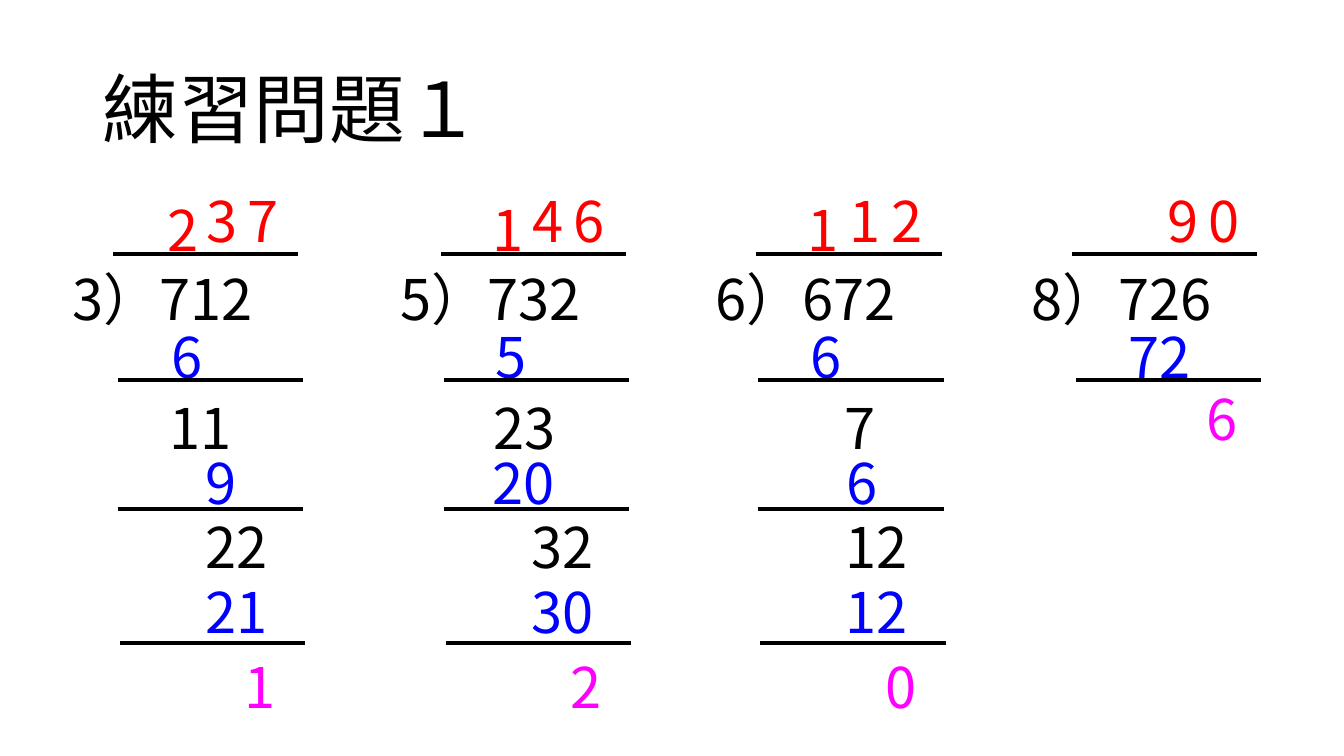
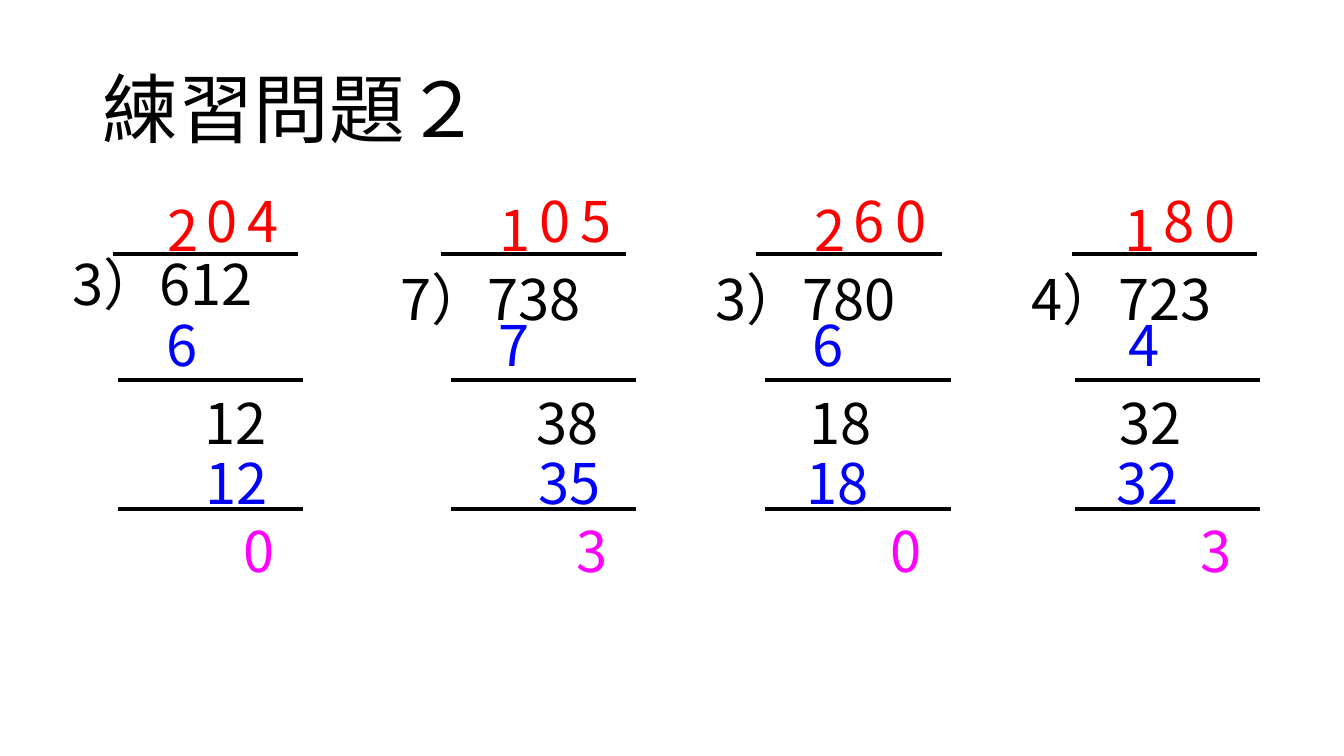
from dataclasses import dataclass
from lxml.etree import SubElement
from pptx import Presentation
from pptx.dml.color import RGBColor
from pptx.enum.shapes import MSO_CONNECTOR
from pptx.enum.text import MSO_ANCHOR, MSO_AUTO_SIZE
from pptx.oxml.ns import qn
from pptx.util import Inches, Pt

FONT = "Noto Sans CJK JP"
COLORS = {"ink": "000000", "quotient": "FF0000", "product": "0000FF", "rest": "FF00FF"}

# Parts of one long division, measured from the top left of its box
TOP = 1.56
LEFTS = (0.62, 3.87, 7, 10.13)
BAR_X, BAR_Y, BAR_W = 0.5, 0.96, 1.84
RULES = ((0, 2.21), (0, 3.49), (0.02, 4.82))
DIGITS = (0.39, 0.78, 1.19)
WIDTHS = {1: 0.58, 2: 1.14}


@dataclass
class Sum:
    head: str
    quotient: str
    work: float  # left edge of the working
    steps: tuple  # (number, offset from work), the remainder last
    slip: float = 0  # shift of the later quotient digits
    high: bool = False  # dividend close under the bar


@dataclass
class Sheet:
    title: str
    rows: tuple  # (top, line spacing) of each step
    rests: dict  # top of the remainder by number of steps
    sums: tuple


SHEETS = (
    Sheet(
        "練習問題１",
        ((1.26, 1.5), (1.96, 1.5), (2.84, 1), (3.48, 1), (4.12, 1)),
        {2: 2.21, 6: 4.86},
        (
            Sum("3）712", "237", 0.55, (("6", 0.43), ("11", 0.41), ("9", 0.77),
                                       ("22", 0.77), ("21", 0.77), ("1", 1.16))),
            Sum("5）732", "146", 0.53, (("5", 0.42), ("23", 0.4), ("20", 0.39),
                                       ("32", 0.77), ("30", 0.77), ("2", 1.16))),
            Sum("6）672", "112", 0.52, (("6", 0.42), ("7", 0.76), ("6", 0.78),
                                       ("12", 0.77), ("12", 0.77), ("0", 1.16)), slip=0.03),
            Sum("8）726", "90", 0.54, (("72", 0.42), ("6", 1.2)), slip=0.03),
        ),
    ),
    Sheet(
        "練習問題２",
        ((1.47, 1), (2.25, 1), (2.84, 1)),
        {4: 3.52},
        (
            Sum("3）612", "204", 0.55, (("6", 0.38), ("12", 0.76), ("12", 0.77), ("0", 1.15)),
                high=True),
            Sum("7）738", "105", 0.6, (("7", 0.38), ("38", 0.75), ("35", 0.77), ("3", 1.15))),
            Sum("3）780", "260", 0.59, (("6", 0.37), ("18", 0.34), ("18", 0.31), ("0", 1.14))),
            Sum("4）723", "180", 0.53, (("4", 0.43), ("32", 0.35), ("32", 0.32), ("3", 1.15))),
        ),
    ),
)


def add_text(slide, text, left, top, width, height, size=40, color="ink", lead=1):
    box = slide.shapes.add_textbox(Inches(left), Inches(top), Inches(width), Inches(height))
    frame = box.text_frame
    frame.text = text
    frame.word_wrap = True
    line = frame.paragraphs[0]
    line.line_spacing = lead
    run = line.runs[0]
    run.font.size = Pt(size)
    run.font.color.rgb = RGBColor.from_string(COLORS[color])
    run.font.name = FONT
    SubElement(run.font._element, qn("a:ea")).set("typeface", FONT)
    return frame


def add_title(slide, text):
    frame = add_text(slide, text, 0.92, 0.4, 11.5, 1.45, size=54, lead=0.9)
    frame.vertical_anchor = MSO_ANCHOR.MIDDLE


def add_number(slide, text, left, top, color="ink", lead=1):
    width = WIDTHS.get(len(text), 2.34)
    height = 1.02 if lead > 1 else 0.77
    frame = add_text(slide, text, left, top, width, height, color=color, lead=lead)
    frame.auto_size = MSO_AUTO_SIZE.SHAPE_TO_FIT_TEXT


def add_rule(slide, left, top):
    rule = slide.shapes.add_connector(
        MSO_CONNECTOR.STRAIGHT, Inches(left), Inches(top), Inches(left + BAR_W), Inches(top))
    rule.line.width = Pt(3)
    rule.line.color.rgb = RGBColor.from_string(COLORS["ink"])
    SubElement(rule._element.spPr, qn("a:effectLst"))


def add_sum(slide, item, sheet, left, top):
    work = left + item.work

    # Dividend under its bar
    if item.high:
        add_number(slide, item.head, left, top + 0.87)
    else:
        add_number(slide, item.head, left, top + 0.68, lead=1.5)
    add_rule(slide, left + BAR_X, top + BAR_Y)

    # Quotient, right-aligned on the digit columns
    first = len(DIGITS) - len(item.quotient)
    for col, digit in enumerate(item.quotient, first):
        if col == 0:
            add_number(slide, digit, work + DIGITS[col], top, "quotient", 1.5)
        else:
            add_number(slide, digit, work + DIGITS[col] + item.slip, top + 0.24, "quotient")

    # Products and differences in turn
    *steps, (rest, shift) = item.steps
    for index, ((number, dx), (dy, lead)) in enumerate(zip(steps, sheet.rows)):
        color = "ink" if index % 2 else "product"
        add_number(slide, number, work + dx, top + dy, color, lead)

    # Remainder
    add_number(slide, rest, work + shift, top + sheet.rests[len(item.steps)], "rest")

    # One rule under each product
    for dx, dy in RULES[:len(item.steps) // 2]:
        add_rule(slide, work + dx, top + dy)


def main():
    deck = Presentation()
    deck.slide_width, deck.slide_height = Inches(13.33), Inches(7.5)
    for sheet in SHEETS:
        slide = deck.slides.add_slide(deck.slide_layouts[6])
        add_title(slide, sheet.title)
        for left, item in zip(LEFTS, sheet.sums):
            add_sum(slide, item, sheet, left, TOP)
    deck.save("out.pptx")


if __name__ == "__main__":
    main()
